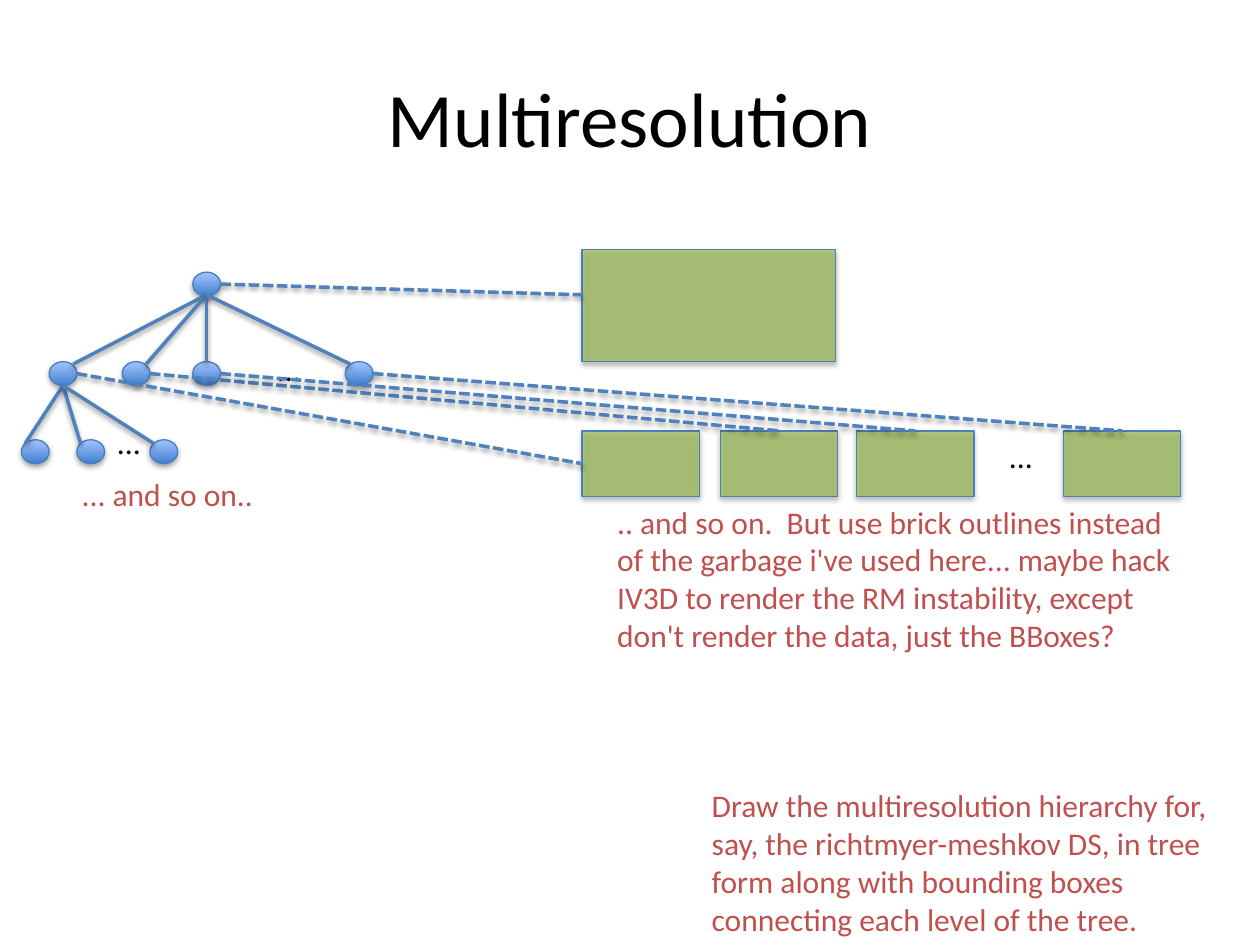
from dataclasses import dataclass

from lxml import etree
from pptx import Presentation
from pptx.dml.color import RGBColor
from pptx.enum.dml import MSO_LINE
from pptx.enum.shapes import MSO_CONNECTOR, MSO_SHAPE
from pptx.enum.text import MSO_ANCHOR, MSO_AUTO_SIZE, PP_ALIGN
from pptx.oxml.ns import qn
from pptx.util import Inches, Pt

OVAL, RECT = MSO_SHAPE.OVAL, MSO_SHAPE.RECTANGLE
STRAIGHT, DASH = MSO_CONNECTOR.STRAIGHT, MSO_LINE.SQUARE_DOT
MIDDLE, CENTER = MSO_ANCHOR.MIDDLE, PP_ALIGN.CENTER
GROW = MSO_AUTO_SIZE.SHAPE_TO_FIT_TEXT

FONT = "Calibri"
COLORS = {
    "ink": "000000", "note": "C0504D", "edge": "4F81BD", "rim": "4B7EBC",
    "low": "3F80CE", "high": "A4C4FF", "brick": "9BBB59",
}

# Grid: 10 columns by 7.5 rows
WIDTH, HEIGHT = Inches(10), Inches(7.5)
COL, ROW = WIDTH / 10, HEIGHT / 7.5


@dataclass(frozen=True)
class Box:
    x: float
    y: float
    w: float
    h: float

    @property
    def left(self) -> tuple[float, float]:
        return self.x, self.y + self.h / 2

    @property
    def right(self) -> tuple[float, float]:
        return self.x + self.w, self.y + self.h / 2

    @property
    def top(self) -> tuple[float, float]:
        return self.x + self.w / 2, self.y

    def place(self) -> tuple[int, int, int, int]:
        return (int(self.x * COL), int(self.y * ROW),
                int(self.w * COL), int(self.h * ROW))


@dataclass(frozen=True)
class Note:
    text: str
    box: Box
    color: str = "note"


@dataclass(frozen=True)
class Fan:
    tip: tuple[float, float]
    ends: tuple[tuple[float, float], ...]


def rgb(name: str) -> RGBColor:
    return RGBColor.from_string(COLORS[name])


def add_shade(item, alpha: int, drop: float) -> None:
    """Soft shadow straight below the item."""
    props = item._element.spPr
    for old in props.findall(qn("a:effectLst")):
        props.remove(old)
    group = etree.SubElement(props, qn("a:effectLst"))
    shade = etree.SubElement(group, qn("a:outerShdw"), blurRad=str(Pt(3.1)),
                             dist=str(Pt(drop)), dir="5400000", rotWithShape="0")
    tint = etree.SubElement(shade, qn("a:srgbClr"), val=COLORS["ink"])
    etree.SubElement(tint, qn("a:alpha"), val=str(alpha * 1000))


def add_form(slide, kind: int, box: Box):
    form = slide.shapes.add_shape(kind, *box.place())
    form.line.color.rgb = rgb("rim")
    form.line.width = Pt(0.75)
    return form


def add_node(slide, box: Box) -> None:
    node = add_form(slide, OVAL, box)
    node.fill.gradient()
    node.fill.gradient_angle = 90
    for stop, name in zip(node.fill.gradient_stops, ("low", "high")):
        stop.color.rgb = rgb(name)
    add_shade(node, 35, 1.8)


def add_brick(slide, box: Box) -> None:
    brick = add_form(slide, RECT, box)
    brick.fill.solid()
    brick.fill.fore_color.rgb = rgb("brick")
    tint = brick._element.spPr.find(qn("a:solidFill")).find(qn("a:srgbClr"))
    etree.SubElement(tint, qn("a:alpha"), val="75000")
    add_shade(brick, 35, 1.8)


def add_edge(slide, start: tuple[float, float], end: tuple[float, float],
             dashed: bool = False) -> None:
    edge = slide.shapes.add_connector(
        STRAIGHT, int(start[0] * COL), int(start[1] * ROW),
        int(end[0] * COL), int(end[1] * ROW))
    edge.line.color.rgb = rgb("edge")
    edge.line.width = Pt(2)
    if dashed:
        edge.line.dash_style = DASH
    add_shade(edge, 38, 1.6)


def add_run(para, text: str, size: int, color: str) -> None:
    run = para.add_run()
    run.text = text
    run.font.name = FONT
    run.font.size = Pt(size)
    run.font.color.rgb = rgb(color)


def add_note(slide, note: Note) -> None:
    frame = slide.shapes.add_textbox(*note.box.place()).text_frame
    frame.word_wrap = True
    frame.auto_size = GROW
    add_run(frame.paragraphs[0], note.text, 18, note.color)


def add_title(slide, text: str, box: Box) -> None:
    title = slide.shapes.title
    title.left, title.top, title.width, title.height = box.place()
    title.text_frame.vertical_anchor = MIDDLE
    para = title.text_frame.paragraphs[0]
    para.alignment = CENTER
    add_run(para, text, 44, "ink")


# Tree levels and their bricks
ROOT = Box(1.53, 2.16, 0.22, 0.19)
KIDS = [Box(x, 2.87, 0.22, 0.19) for x in (0.39, 0.97, 1.53, 2.74)]
LEAVES = [Box(x, 3.49, 0.22, 0.19) for x in (0.17, 0.61, 1.19)]
FANS = [
    Fan((1.64, 2.34), ((0.58, 2.89), (1.16, 2.89), (1.64, 2.87), (2.78, 2.89))),
    Fan((0.5, 3.06), ((0.2, 3.52), (0.64, 3.52), (1.22, 3.52))),
]
WHOLE = Box(4.62, 1.98, 2.01, 0.89)
PARTS = [Box(x, 3.42, 0.93, 0.52) for x in (4.62, 5.72, 6.8, 8.44)]

DOTS = [Note("...", Box(x, y, 0.53, 0.4), "ink")
        for x, y in ((2.1, 2.73), (0.83, 3.31), (7.91, 3.42))]
NOTES = [
    Note("Draw the multiresolution hierarchy for, say, the richtmyer-meshkov DS, "
         "in tree form along with bounding boxes connecting each level of the tree.",
         Box(5.55, 6.19, 4.45, 1.31)),
    Note("... and so on..", Box(0.55, 3.72, 1.9, 0.4)),
    Note(".. and so on.  But use brick outlines instead of the garbage i've used "
         "here... maybe hack IV3D to render the RM instability, except don't "
         "render the data, just the BBoxes?", Box(4.8, 3.94, 4.7, 1.31)),
]


def main() -> None:
    deck = Presentation()
    deck.slide_width, deck.slide_height = WIDTH, HEIGHT
    slide = deck.slides.add_slide(deck.slide_layouts[5])
    add_title(slide, "Multiresolution", Box(0.5, 0.3, 9, 1.25))

    # Tree
    for box in (ROOT, *KIDS, *LEAVES):
        add_node(slide, box)
    for note in DOTS:
        add_note(slide, note)
    for fan in FANS:
        for end in fan.ends:
            add_edge(slide, end, fan.tip)

    # Bricks, each tied to its node
    for box in (WHOLE, *PARTS):
        add_brick(slide, box)
    add_edge(slide, ROOT.right, (WHOLE.x, 2.34), True)
    add_edge(slide, KIDS[0].right, PARTS[0].left, True)
    for kid, part in zip(KIDS[1:], PARTS[1:]):
        add_edge(slide, kid.right, part.top, True)

    # Remarks
    for note in NOTES:
        add_note(slide, note)
    deck.save("out.pptx")


if __name__ == "__main__":
    main()
